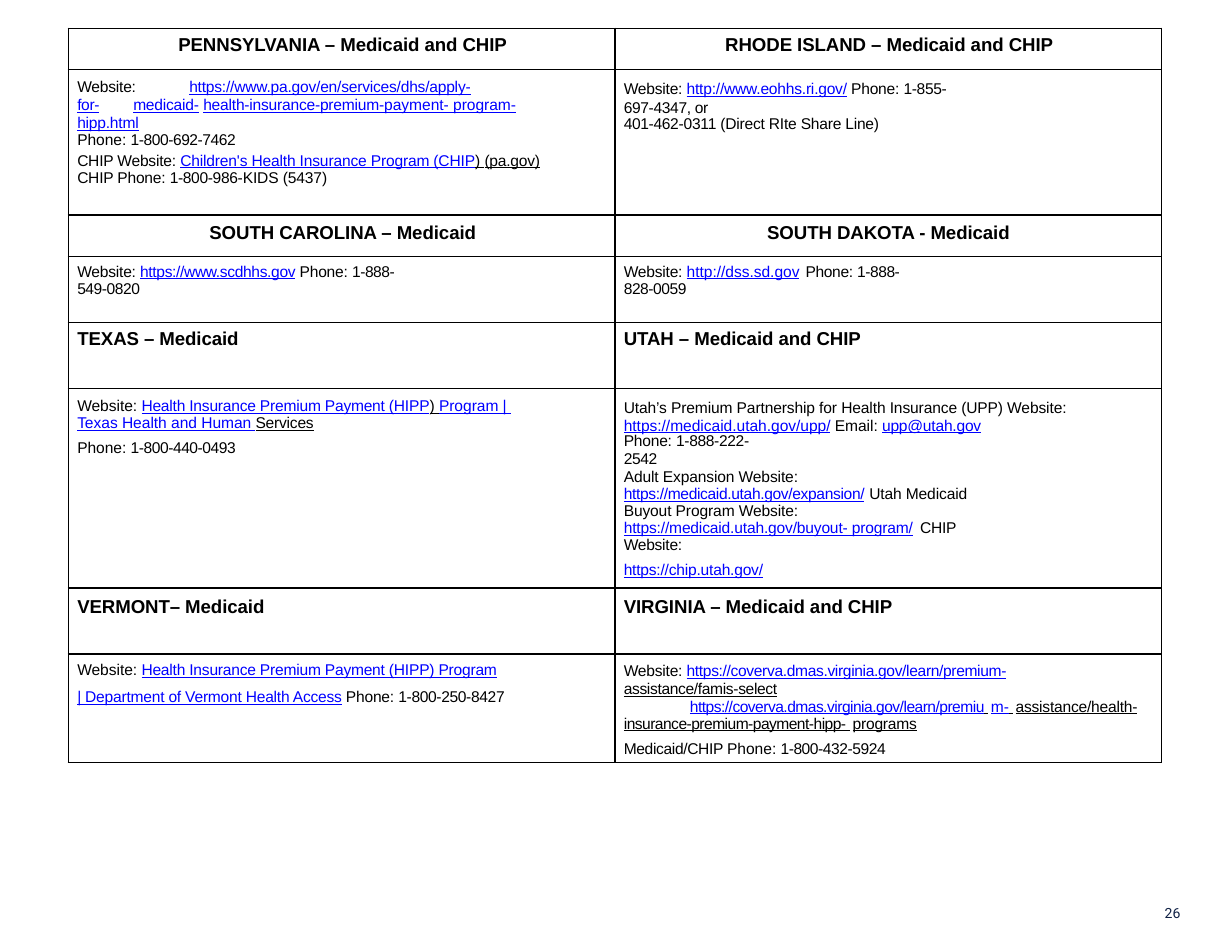
from dataclasses import dataclass

from lxml import etree
from pptx import Presentation
from pptx import util as u
from pptx.dml.color import RGBColor
from pptx.enum import text
from pptx.oxml import ns


@dataclass(frozen=True)
class Theme:
    font: str = "Arial"
    number_font: str = "Roboto"
    black: str = "000000"
    link: str = "0000FF"
    navy: str = "0F2044"
    heading_size: float = 12
    body_size: float = 10
    number_size: float = 9
    line_width: float = 1
    edge_width: float = 0.5


@dataclass
class Line:
    """One paragraph: runs are (text, kind, letter spacing in points)."""
    runs: list
    before: float = 0
    spacing: float = None
    left: float = 0.08
    right: float = 0
    first: float = 0
    centered: bool = False
    tabs: tuple = ()


def plain(words, spacing=0):
    return words, "plain", spacing


def link(words, spacing=0):
    return words, "link", spacing


def underlined(words, spacing=0):
    return words, "underlined", spacing


def heading(words, before, left=0.08, centered=False):
    return [Line([(words, "heading", -0.05)], before, left=left, centered=centered)]


class SlideBuilder:
    def __init__(self, slide, theme):
        self.slide = slide
        self.theme = theme

    def add_run(self, paragraph, words, kind, spacing):
        theme = self.theme
        run = paragraph.add_run()
        run.text = words
        font = run.font
        font.name = theme.number_font if kind == "number" else theme.font
        font.size = u.Pt({"heading": theme.heading_size,
                          "number": theme.number_size}.get(kind, theme.body_size))
        font.bold = kind == "heading"
        font.underline = kind in ("link", "underlined")
        colour = {"link": theme.link, "number": theme.navy}.get(kind, theme.black)
        font.color.rgb = RGBColor.from_string(colour)
        if spacing:
            font._element.set("spc", str(round(spacing * 100)))

    def fill_paragraph(self, paragraph, line):
        paragraph.space_before = u.Pt(line.before)
        if line.spacing:
            paragraph.line_spacing = u.Pt(line.spacing) if line.spacing > 2 else line.spacing
        if line.centered:
            paragraph.alignment = text.PP_ALIGN.CENTER
        properties = paragraph._p.get_or_add_pPr()
        for name, length in (("marL", line.left), ("marR", line.right), ("indent", line.first)):
            properties.set(name, str(u.Inches(length)))
        if line.tabs:
            stops = etree.SubElement(properties, ns.qn("a:tabLst"))
            for position in line.tabs:
                etree.SubElement(stops, ns.qn("a:tab"), pos=str(u.Inches(position)), algn="l")
        for run in line.runs:
            self.add_run(paragraph, *run)

    def set_borders(self, cell, top, bottom):
        properties = cell._tc.get_or_add_tcPr()
        widths = {"L": self.theme.line_width, "R": self.theme.line_width, "T": top, "B": bottom}
        for index, (side, width) in enumerate(widths.items()):
            border = etree.Element(ns.qn(f"a:ln{side}"), w=str(u.Pt(width)))
            fill = etree.SubElement(border, ns.qn("a:solidFill"))
            etree.SubElement(fill, ns.qn("a:srgbClr"), val=self.theme.black)
            properties.insert(index, border)

    def add_table(self, left, top, column_width, row_heights, insets, rows):
        theme = self.theme
        columns = len(rows[0])
        table = self.slide.shapes.add_table(
            len(rows), columns, u.Inches(left), u.Inches(top),
            u.Inches(column_width * columns), u.Inches(sum(row_heights))).table
        table.first_row = table.horz_banding = False
        for column in table.columns:
            column.width = u.Inches(column_width)
        last = len(rows) - 1
        for r, cells in enumerate(rows):
            table.rows[r].height = u.Inches(row_heights[r])
            for c, lines in enumerate(cells):
                cell = table.cell(r, c)
                cell.margin_left = cell.margin_right = cell.margin_bottom = 0
                cell.margin_top = u.Inches(insets[r][c])
                cell.fill.background()
                self.set_borders(cell, theme.edge_width if r == 0 else theme.line_width,
                                 theme.edge_width if r == last else theme.line_width)
                frame = cell.text_frame
                for index, line in enumerate(lines):
                    self.fill_paragraph(
                        frame.add_paragraph() if index else frame.paragraphs[0], line)

    def add_page_number(self, number, left, top, width, height):
        box = self.slide.shapes.add_textbox(*map(u.Inches, (left, top, width, height)))
        frame = box.text_frame
        frame.word_wrap = True
        frame.margin_left = frame.margin_right = frame.margin_top = frame.margin_bottom = 0
        paragraph = frame.paragraphs[0]
        self.fill_paragraph(paragraph, Line([(number, "number", 0)], spacing=1.15, left=0))
        paragraph.alignment = text.PP_ALIGN.RIGHT


PENNSYLVANIA = [
    Line([plain("Website:\t", -0.1), link("https://www.pa.gov/en/services/dhs/apply-", -0.1),
          plain("\t"), link("for-", -0.2), link("\t"), link("medicaid-", -0.1), plain(" "),
          link("health-insurance-premium-", -0.1), link("payment- program- "),
          link("hipp.html", -0.1)],
         6, 11.5, right=0.62, tabs=(0.77, 3.48, 3.85)),
    Line([plain("Phone: "), plain("1-800-692-7462", -0.25)], 0, 10.7),
    Line([plain("CHIP Website: ", -0.1), link("Children's Health Insurance Program (CHIP", -0.08),
          underlined(") "), underlined("(pa.gov)", -0.1), plain(" CHIP Phone: ", -0.1),
          plain("1-800-986-", -0.2), plain("KIDS (5437)", -0.05)], 2.2, 11.1, right=0.45),
]
RHODE_ISLAND = [
    Line([plain("Website: ", -0.1), link("http://www.eohhs.ri.gov/", -0.1),
          plain(" Phone: ", -0.1), plain("1-855- 697-4347, or", -0.2)], 6.5, 11.9, right=1.78),
    Line([plain("401-462-", -0.2), plain("0311 (Direct RIte Share Line)", -0.1)], 0, 10.7),
]
SOUTH_CAROLINA = [
    Line([plain("Website: ", -0.1), link("https://www.scdhhs.gov", -0.2),
          plain(" Phone: ", -0.1), plain("1-888- 549-0820", -0.25)], 4.5, right=1.83),
]
SOUTH_DAKOTA = [
    Line([plain("Website: ", -0.1), link("http://dss.sd.gov"), plain(" ", 1.1),
          plain("Phone: ", -0.2), plain("1-888- 828-0059", -0.25)], 4.5, right=2.2),
]
TEXAS = [
    Line([plain("Website: "), link("Health Insurance Premium Payment (HIPP", -0.1),
          underlined(") "), link("Program | "), plain(" "),
          link("Texas Health and Human "), underlined("Services", -0.1)], 6, right=0.7),
    Line([plain("Phone: "), plain("1-800-440-0493", -0.25)], 4.5),
]
UTAH = [
    Line([plain("Utah’s Premium Partnership for Health Insurance (UPP) Website: ", -0.06),
          link("https://medicaid.utah.gov/upp/"), plain(" Email: "),
          link("upp@utah.gov", -0.1)], 6.7, 11.5, right=0.7),
    Line([plain("Phone: ", -0.1), plain("1-888-222-", -0.2)], 0, 10),
    Line([plain("2542", -0.2)], 0, 11.6),
    Line([plain("Adult Expansion Website: ", -0.05),
          link("https://medicaid.utah.gov/expansion/", -0.2), plain(" ", 0.3),
          plain("Utah Medicaid Buyout Program Website: ", -0.05),
          link("https://medicaid.utah.gov/buyout- program/", -0.08), plain(" ", 1.8),
          plain("CHIP Website:", -0.15)], 0.2, 0.99, right=1.58),
    Line([link("https://chip.utah.gov/", -0.1)], 4.5, 11.6),
]
VERMONT = [
    Line([plain("Website: "), link("Health Insurance Premium Payment (HIPP) Program", -0.1)], 5.2),
    Line([link("| Department of Vermont Health Access", -0.1), plain(" Phone: ", -0.1),
          plain("1-800-250-8427", -0.2)], 6),
]
VIRGINIA = [
    Line([plain("Website: ", -0.1), link("https://coverva.dmas.virginia.gov/learn/premium-", -0.2),
          plain(" ", -0.2), underlined("assistance/famis-select", -0.2)], 6, right=0.95),
    Line([link("https://coverva.dmas.virginia.gov/learn/premiu", -0.3), underlined(" ", 1.6),
          link("m-"), underlined(" ", 1.5), underlined("assistance/health-", -0.1), plain(" "),
          underlined("insurance-premium-payment-hipp-", -0.3), underlined(" ", 1.5),
          underlined("programs", -0.1)], 0.6, 10.9, first=0.59),
    Line([plain("Medicaid/CHIP ", -0.2), plain("Phone: "), plain("1-800-432-5924", -0.25)],
         5.3, 11.3),
]

ROWS = [
    [heading("PENNSYLVANIA – Medicaid and CHIP", 4.6, 0.02, True),
     heading("RHODE ISLAND – Medicaid and CHIP", 4.6, 0.02, True)],
    [PENNSYLVANIA, RHODE_ISLAND],
    [heading("SOUTH CAROLINA – Medicaid", 4.8, 1.26),
     heading("SOUTH DAKOTA - Medicaid", 4.8, 1.36)],
    [SOUTH_CAROLINA, SOUTH_DAKOTA],
    [heading("TEXAS – Medicaid", 4), heading("UTAH – Medicaid and CHIP", 4)],
    [TEXAS, UTAH],
    [heading("VERMONT– Medicaid", 5.8), heading("VIRGINIA – Medicaid and CHIP", 5.8)],
    [VERMONT, VIRGINIA],
]
ROW_HEIGHTS = [0.37, 1.3, 0.37, 0.59, 0.59, 1.78, 0.59, 0.97]
TOP_INSETS = [(0.06, 0.06), (0.08, 0.09), (0.07, 0.07), (0.06, 0.06),
              (0.05, 0.05), (0.08, 0.09), (0.08, 0.08), (0.07, 0.08)]


def main():
    presentation = Presentation()
    presentation.slide_width = u.Inches(11)
    presentation.slide_height = u.Inches(8.5)
    slide = presentation.slides.add_slide(presentation.slide_layouts[6])
    builder = SlideBuilder(slide, Theme())
    builder.add_table(0.61, 0.25, 4.88, ROW_HEIGHTS, TOP_INSETS, ROWS)
    builder.add_page_number("26", 10.08, 8.05, 0.46, 0.16)
    presentation.save("out.pptx")


if __name__ == "__main__":
    main()
